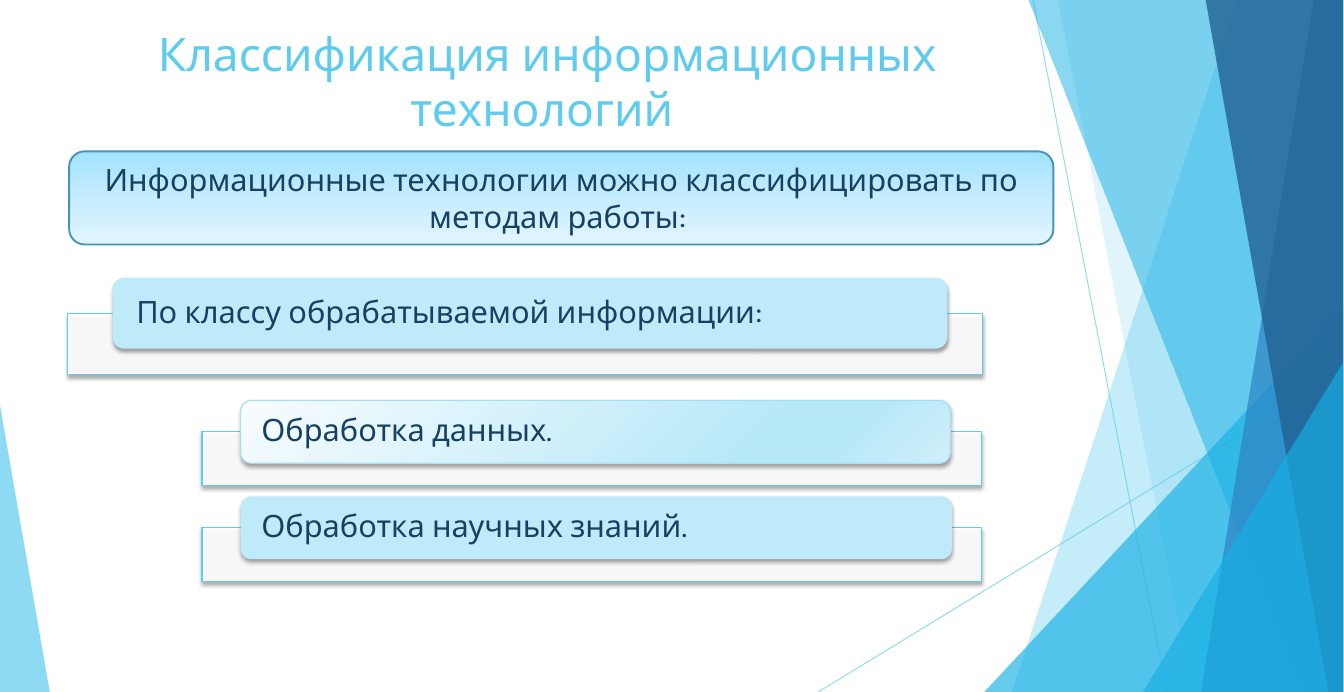
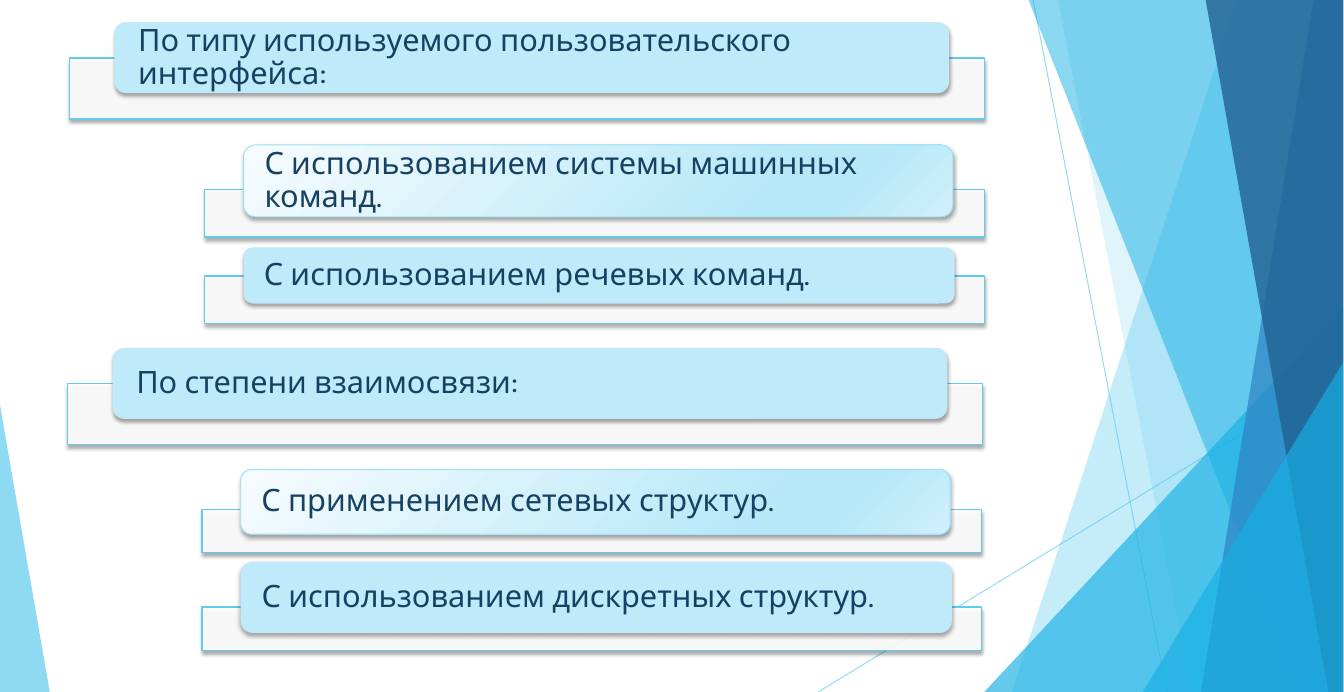
from dataclasses import dataclass
from typing import Any, Optional

from lxml.etree import SubElement
from pptx import Presentation
from pptx.dml.color import RGBColor
from pptx.enum.shapes import MSO_CONNECTOR, MSO_SHAPE
from pptx.enum.text import MSO_ANCHOR, PP_ALIGN
from pptx.oxml.ns import qn
from pptx.util import Pt

EMU_PER_PX = 9144
SLIDE_W, SLIDE_H = 1457, 750
EDGE = 1456

SKY, CYAN, BLUE, NAVY = "5FCBEF", "17B0E4", "2E83C3", "226292"
INK, PALE, WHITE = "174162", "BFEAF9", "FFFFFF"
FONT = "Karla"


@dataclass(frozen=True)
class Gradient:
    stops: tuple[tuple[int, str], ...]
    angle: int


@dataclass(frozen=True)
class Facet:
    points: tuple[tuple[int, int], ...]
    color: str
    alpha: int


@dataclass(frozen=True)
class Corner:
    box: tuple[int, int, int, int]
    apex: int
    color: str
    alpha: int


@dataclass(frozen=True)
class Ray:
    start: tuple[int, int]
    end: tuple[int, int]


@dataclass(frozen=True)
class Level:
    bar_w: int
    indent: int
    label_w: int
    inset: int
    fill: Any
    edge: Optional[str] = None


@dataclass(frozen=True)
class Step:
    text: str
    level: Level
    left: int
    top: int
    label_h: int
    bar_top: int
    bar_h: int


BANNER_FILL = Gradient(((0, "A2E2FF"), (50, "C5ECFF"), (100, "E2F5FF")), 90)
SHEEN = Gradient(((0, "F7FCFE"), (74, "B7E8F8"), (83, "B7E8F8"), (100, "CFEFFA")), 45)

HEAD = Level(992, 49, 905, 22, PALE)
FIRST = Level(845, 42, 769, 19, SHEEN, "9FE0F5")
SECOND = Level(845, 42, 771, 19, PALE)

BACKDROP = (
    Ray((1120, 0), (1265, SLIDE_H)),
    Ray((EDGE, 403), (887, SLIDE_H)),
    Facet(((1341, 0), (EDGE, 0), (EDGE, SLIDE_H), (1097, SLIDE_H)), SKY, 36),
    Facet(((1147, 0), (SLIDE_W, 0), (SLIDE_W, SLIDE_H), (1292, SLIDE_H)), SKY, 20),
    Corner((1067, 333, 389, 417), 1, CYAN, 66),
    Facet(((1115, 0), (EDGE, 0), (EDGE, SLIDE_H), (1411, SLIDE_H)), CYAN, 50),
    Facet(((1424, 0), (EDGE, 0), (EDGE, SLIDE_H), (1302, SLIDE_H)), BLUE, 70),
    Facet(((1307, 0), (EDGE, 0), (EDGE, SLIDE_H), (1440, SLIDE_H)), NAVY, 80),
    Corner((1239, 393, 217, 357), 1, CYAN, 66),
    Corner((0, 439, 54, 311), 0, SKY, 70),
)

CLASS_STEPS = (
    Step("По классу обрабатываемой информации:", HEAD, 73, 301, 77, 340, 66),
    Step("Обработка данных.", FIRST, 219, 434, 68, 468, 58),
    Step("Обработка научных знаний.", SECOND, 219, 538, 68, 572, 58),
)

INTERFACE_STEPS = (
    Step("По типу используемого пользовательского интерфейса:", HEAD, 75, 24, 77, 63, 66),
    Step("С использованием системы машинных команд.", FIRST, 222, 157, 78, 205, 52),
    Step("С использованием речевых команд.", SECOND, 222, 268, 61, 299, 52),
    Step("По степени взаимосвязи:", HEAD, 73, 377, 77, 416, 66),
    Step("С применением сетевых структур.", FIRST, 219, 509, 70, 552, 47),
    Step("С использованием дискретных структур.", SECOND, 219, 609, 77, 658, 47),
)


def px(*values: int) -> list[int]:
    return [v * EMU_PER_PX for v in values]


def rgb(value: str) -> RGBColor:
    return RGBColor.from_string(value)


def assign(target: Any, values: dict[str, Any]) -> None:
    for name, value in values.items():
        setattr(target, name, value)


def set_alpha(sp: Any, percent: int) -> None:
    color = next(sp.element.spPr.iter(qn("a:srgbClr")))
    SubElement(color, qn("a:alpha"), val=str(percent * 1000))


def paint(sp: Any, fill: Any, alpha: int = 100, edge: Optional[str] = None,
          edge_pt: float = 1) -> None:
    sp.shadow.inherit = False
    if isinstance(fill, Gradient):
        sp.fill.gradient()
        sp.fill.gradient_angle = 360 - fill.angle
        stops = next(sp.element.spPr.iter(qn("a:gsLst")))
        for old in list(stops):
            stops.remove(old)
        for pos, color in fill.stops:
            gs = SubElement(stops, qn("a:gs"), pos=str(pos * 1000))
            SubElement(gs, qn("a:srgbClr"), val=color)
    else:
        sp.fill.solid()
        sp.fill.fore_color.rgb = rgb(fill)
        if alpha < 100:
            set_alpha(sp, alpha)
    if edge:
        sp.line.color.rgb = rgb(edge)
        sp.line.width = Pt(edge_pt)
    else:
        sp.line.fill.background()


def drop_shadow(sp: Any) -> None:
    effects = sp.element.spPr.find(qn("a:effectLst"))
    shadow = SubElement(effects, qn("a:outerShdw"), blurRad=str(Pt(3)), dist=str(Pt(2)),
                        dir="5400000", rotWithShape="0")
    color = SubElement(shadow, qn("a:srgbClr"), val="000000")
    SubElement(color, qn("a:alpha"), val="35000")


def write(sp: Any, text: str, size: int, color: str, frame: dict[str, Any],
          para: dict[str, Any]) -> None:
    tf = sp.text_frame
    assign(tf, {"word_wrap": True, **frame})
    p = tf.paragraphs[0]
    assign(p, para)
    r = p.add_run()
    r.text = text
    assign(r.font, {"name": FONT, "size": Pt(size)})
    r.font.color.rgb = rgb(color)


def draw_ray(s: Any, ray: Ray) -> Any:
    sp = s.shapes.add_connector(MSO_CONNECTOR.STRAIGHT, *px(*ray.start, *ray.end))
    sp.line.color.rgb = rgb(SKY)
    sp.line.width = Pt(0.75)
    set_alpha(sp, 70)
    SubElement(sp.element.spPr, qn("a:effectLst"))
    return sp


def draw_facet(s: Any, facet: Facet) -> Any:
    builder = s.shapes.build_freeform(*facet.points[0], scale=EMU_PER_PX)
    builder.add_line_segments(facet.points[1:], close=True)
    sp = builder.convert_to_shape()
    paint(sp, facet.color, facet.alpha)
    return sp


def draw_corner(s: Any, corner: Corner) -> Any:
    sp = s.shapes.add_shape(MSO_SHAPE.ISOSCELES_TRIANGLE, *px(*corner.box))
    sp.adjustments[0] = corner.apex
    paint(sp, corner.color, corner.alpha)
    return sp


def add_backdrop(prs: Any, s: Any) -> None:
    draw = {Ray: draw_ray, Facet: draw_facet, Corner: draw_corner}
    tree = prs.slide_master.shapes.element
    for i, item in enumerate(BACKDROP):
        el = draw[type(item)](s, item).element
        next(el.iter(qn("p:cNvPr"))).set("id", str(100 + i))
        tree.insert(2 + i, el)


def add_title(s: Any, text: str) -> None:
    sp = s.shapes.title
    assign(sp, dict(zip(("left", "top", "width", "height"), px(80, 22, 1027, 144))))
    write(sp, text, 36, SKY, {"vertical_anchor": MSO_ANCHOR.TOP},
          {"alignment": PP_ALIGN.CENTER})


def add_banner(s: Any, text: str) -> None:
    sp = s.shapes.add_shape(MSO_SHAPE.ROUNDED_RECTANGLE, *px(75, 164, 1067, 101))
    paint(sp, BANNER_FILL, edge="4696B1", edge_pt=1.5)
    write(sp, text, 24, INK, {"vertical_anchor": MSO_ANCHOR.MIDDLE},
          {"alignment": PP_ALIGN.CENTER})


def add_step(s: Any, step: Step) -> None:
    level = step.level
    bar = s.shapes.add_shape(MSO_SHAPE.RECTANGLE,
                             *px(step.left, step.bar_top, level.bar_w, step.bar_h))
    paint(bar, WHITE, 90, SKY)
    drop_shadow(bar)
    label = s.shapes.add_shape(MSO_SHAPE.ROUNDED_RECTANGLE,
                               *px(step.left + level.indent, step.top,
                                   level.label_w, step.label_h))
    paint(label, level.fill, edge=level.edge, edge_pt=0.75)
    drop_shadow(label)
    inset, = px(level.inset)
    write(label, step.text, 24, INK,
          {"vertical_anchor": MSO_ANCHOR.MIDDLE, "margin_left": inset,
           "margin_right": inset, "margin_top": 0, "margin_bottom": 0},
          {"alignment": PP_ALIGN.LEFT, "line_spacing": 0.9})


def main() -> None:
    prs = Presentation()
    prs.slide_width, prs.slide_height = px(SLIDE_W, SLIDE_H)
    title_only, blank = prs.slide_layouts[5], prs.slide_layouts[6]

    s = prs.slides.add_slide(title_only)
    add_backdrop(prs, s)
    add_title(s, "Классификация информационных технологий ")
    add_banner(s, "Информационные технологии можно классифицировать по методам работы: ")
    for step in CLASS_STEPS:
        add_step(s, step)

    s = prs.slides.add_slide(blank)
    for step in INTERFACE_STEPS:
        add_step(s, step)

    prs.save("out.pptx")


if __name__ == "__main__":
    main()
